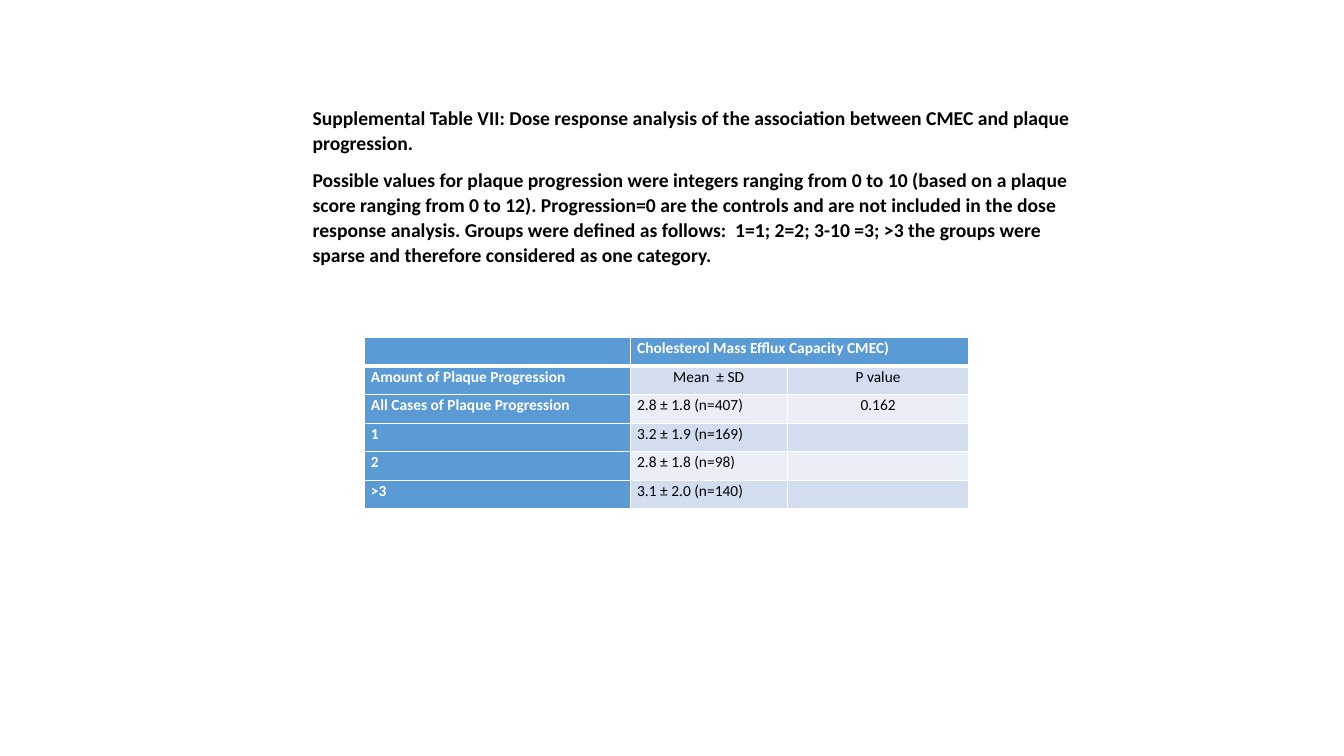
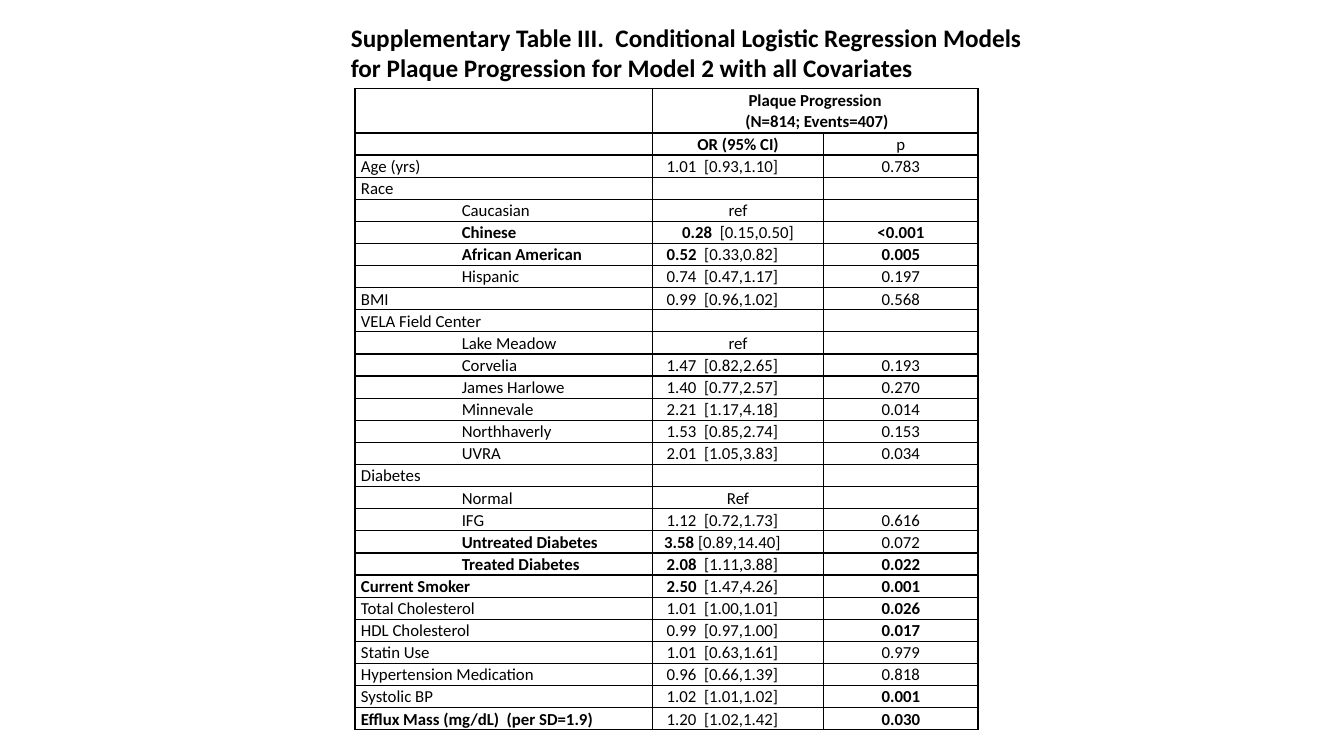
from lxml import etree
from pptx import Presentation
from pptx.dml.color import RGBColor
from pptx.enum.text import MSO_ANCHOR, MSO_AUTO_SIZE, PP_ALIGN
from pptx.oxml.ns import qn
from pptx.util import Inches, Pt

FONT = "Calibri"
COLORS = {"text": "000000", "white": "FFFFFF", "header": "5B9BD5",
          "band_dark": "D2DEEF", "band_light": "EAEFF7"}
LEFT, CENTER = PP_ALIGN.LEFT, PP_ALIGN.CENTER

# Content: **...** is bold, a leading tab is an indented label
DOSE_TITLE = ("Supplemental Table VII: Dose response analysis of the association "
              "between CMEC and plaque progression.")
DOSE_NOTE = ("Possible values for plaque progression were integers ranging from 0 to 10 "
             "(based on a plaque score ranging from 0 to 12). Progression=0 are the controls "
             "and are not included in the dose response analysis. Groups were defined as "
             "follows:  1=1; 2=2; 3-10 =3; >3 the groups were sparse and therefore "
             "considered as one category.")
DOSE_ROWS = [
    ("", "**Cholesterol Mass Efflux Capacity CMEC)**", ""),
    ("**Amount of Plaque Progression**", "Mean  ± SD", "P value"),
    ("**All Cases of Plaque Progression**", "2.8 ± 1.8 (n=407)", "0.162"),
    ("**1**", "3.2 ± 1.9 (n=169)", ""),
    ("**2**", "2.8 ± 1.8 (n=98)", ""),
    ("**>3**", "3.1 ± 2.0 (n=140)", ""),
]
MODEL_TITLE = ("Supplementary Table III.  Conditional Logistic Regression Models "
               "for Plaque Progression for Model 2 with all Covariates")
MODEL_ROWS = [
    ("", "**Plaque Progression**\n** (N=814; Events=407)**", ""),
    ("", "**OR (95% CI)**", "p"),
    ("Age (yrs)", "1.01  [0.93,1.10]", "0.783"),
    ("Race", "", ""),
    ("\tCaucasian", "ref", ""),
    ("\t**Chinese**", "**0.28**  [0.15,0.50]", "**<0.001**"),
    ("\t**African American**", "**0.52**  [0.33,0.82]", "**0.005**"),
    ("\tHispanic", "0.74  [0.47,1.17]", "0.197"),
    ("BMI", "0.99  [0.96,1.02]", "0.568"),
    ("VELA Field Center", "", ""),
    ("\tLake Meadow", "ref", ""),
    ("\tCorvelia", "1.47  [0.82,2.65]", "0.193"),
    ("\tJames Harlowe", "1.40  [0.77,2.57]", "0.270"),
    ("\tMinnevale", "2.21  [1.17,4.18]", "0.014"),
    ("\tNorthhaverly", "1.53  [0.85,2.74]", "0.153"),
    ("\tUVRA", "2.01  [1.05,3.83]", "0.034"),
    ("Diabetes", "", ""),
    ("\tNormal", "Ref", ""),
    ("\tIFG", "1.12  [0.72,1.73]", "0.616"),
    ("\t**Untreated Diabetes**", "**3.58** [0.89,14.40]", "0.072"),
    ("\t**Treated Diabetes**", "**2.08**  [1.11,3.88]", "**0.022**"),
    ("**Current Smoker**", "**2.50**  [1.47,4.26]", "**0.001**"),
    ("Total Cholesterol", "1.01  [1.00,1.01]", "**0.026**"),
    ("HDL Cholesterol", "0.99  [0.97,1.00]", "**0.017**"),
    ("Statin Use", "1.01  [0.63,1.61]", "0.979"),
    ("Hypertension Medication", "0.96  [0.66,1.39]", "0.818"),
    ("Systolic BP", "1.02  [1.01,1.02]", "**0.001**"),
    ("**Efflux Mass (mg/dL)  (per SD=1.9)**", "1.20  [1.02,1.42]", "**0.030**"),
]
CENTERED_CI = "[0.15,0.50]"  # the one interval set without the left shift


def rgb(name):
    return RGBColor.from_string(COLORS[name])


def style_run(r, size, color="text", bold=False):
    f = r.font
    f.name, f.size, f.bold = FONT, Pt(size), bold
    f.color.rgb = rgb(color)


def fill_placeholder(sp, text, box, size, spacing=1.0):
    """Place a title or body and set it as plain bold text."""
    sp.left, sp.top, sp.width, sp.height = (Inches(v) for v in box)
    tf = sp.text_frame
    tf.text = text
    tf.word_wrap, tf.auto_size = True, MSO_AUTO_SIZE.NONE
    tf.vertical_anchor = MSO_ANCHOR.TOP
    p = tf.paragraphs[0]
    p.alignment, p.line_spacing, p.space_before = LEFT, spacing, Pt(0)
    pPr = p._p.get_or_add_pPr()
    pPr.set("marL", "0")
    pPr.set("indent", "0")
    etree.SubElement(pPr, qn("a:buNone"))
    style_run(p.runs[0], size, bold=True)


def set_borders(cell, color, bottom=1):
    tcPr = cell._tc.get_or_add_tcPr()
    for i, (side, width) in enumerate(zip("LRTB", (1, 1, 1, bottom))):
        ln = etree.Element(qn(f"a:ln{side}"), w=str(Pt(width)))
        solid = etree.SubElement(ln, qn("a:solidFill"))
        etree.SubElement(solid, qn("a:srgbClr"), val=COLORS[color])
        tcPr.insert(i, ln)


def fill_cell(cell, text, size, color, align, spacing, left, right):
    """Write marked-up text into a cell, one paragraph a line."""
    cell.margin_left, cell.margin_right = Inches(left), Inches(right)
    cell.margin_top = cell.margin_bottom = 0
    tf = cell.text_frame
    tf.text = text
    for p in tf.paragraphs:
        parts = p.text.split("**")
        p.text = ""
        p.alignment, p.line_spacing = align, spacing
        for i, part in enumerate(parts):
            if part:
                r = p.add_run()
                r.text = part
                style_run(r, size, color, bold=i % 2 == 1)
        if not p.runs:
            etree.SubElement(p._p, qn("a:endParaRPr"), sz=str(size * 100))


def add_grid(s, rows, left, top, widths, heights):
    """Add an unstyled table whose first row spans columns 2 and 3."""
    box = (Inches(v) for v in (left, top, sum(widths), sum(heights)))
    table = s.shapes.add_table(len(rows), len(widths), *box).table
    table.first_row = table.horz_banding = False
    for col, w in zip(table.columns, widths):
        col.width = Inches(w)
    for row, h in zip(table.rows, heights):
        row.height = Inches(h)
    table.cell(0, 1).merge(table.cell(0, 2))
    return table


def add_dose_slide(prs):
    s = prs.slides.add_slide(prs.slide_layouts[1])
    fill_placeholder(s.shapes.title, DOSE_TITLE, (3, 0.99, 7.75, 0.61), 14, 1.06)
    fill_placeholder(s.placeholders[1], DOSE_NOTE, (3, 1.6, 7.75, 1.1), 14, 1.06)

    table = add_grid(s, DOSE_ROWS, 3.61, 3.35, (2.64, 1.56, 1.8),
                     [1.7 / len(DOSE_ROWS)] * len(DOSE_ROWS))
    for r, row in enumerate(DOSE_ROWS):
        for c, text in enumerate(row):
            cell = table.cell(r, c)
            header = r == 0 or c == 0
            centered = not header and (r == 1 or c == 2)
            fill_cell(cell, text, 11, "white" if header else "text",
                      CENTER if centered else LEFT, 1.06, 0.07, 0.07)
            band = "band_dark" if r % 2 else "band_light"
            cell.fill.solid()
            cell.fill.fore_color.rgb = rgb("header" if header else band)
            set_borders(cell, "white", bottom=3 if r == 0 else 1)


def add_model_slide(prs):
    s = prs.slides.add_slide(prs.slide_layouts[5])
    fill_placeholder(s.shapes.title, MODEL_TITLE, (3.38, 0.17, 7.05, 0.71), 18)

    unit = 6.37 / (len(MODEL_ROWS) + 1)  # the first row is two units high
    heights = [2 * unit] + [unit] * (len(MODEL_ROWS) - 1)
    table = add_grid(s, MODEL_ROWS, 3.52, 0.88, (2.95, 1.7, 1.53), heights)
    for r, row in enumerate(MODEL_ROWS):
        for c, text in enumerate(row):
            cell = table.cell(r, c)
            indent = 1 if text.startswith("\t") else 0
            shift = 0.31 if "[" in text and CENTERED_CI not in text else 0
            fill_cell(cell, text.strip("\t"), 12, "text", CENTER if c else LEFT,
                      1.07, 0.06 + indent, 0.06 + shift)
            cell.fill.background()
            set_borders(cell, "text")


def main():
    prs = Presentation()
    prs.slide_width, prs.slide_height = Inches(13.33), Inches(7.5)
    add_dose_slide(prs)
    add_model_slide(prs)
    prs.save("out.pptx")


if __name__ == "__main__":
    main()
